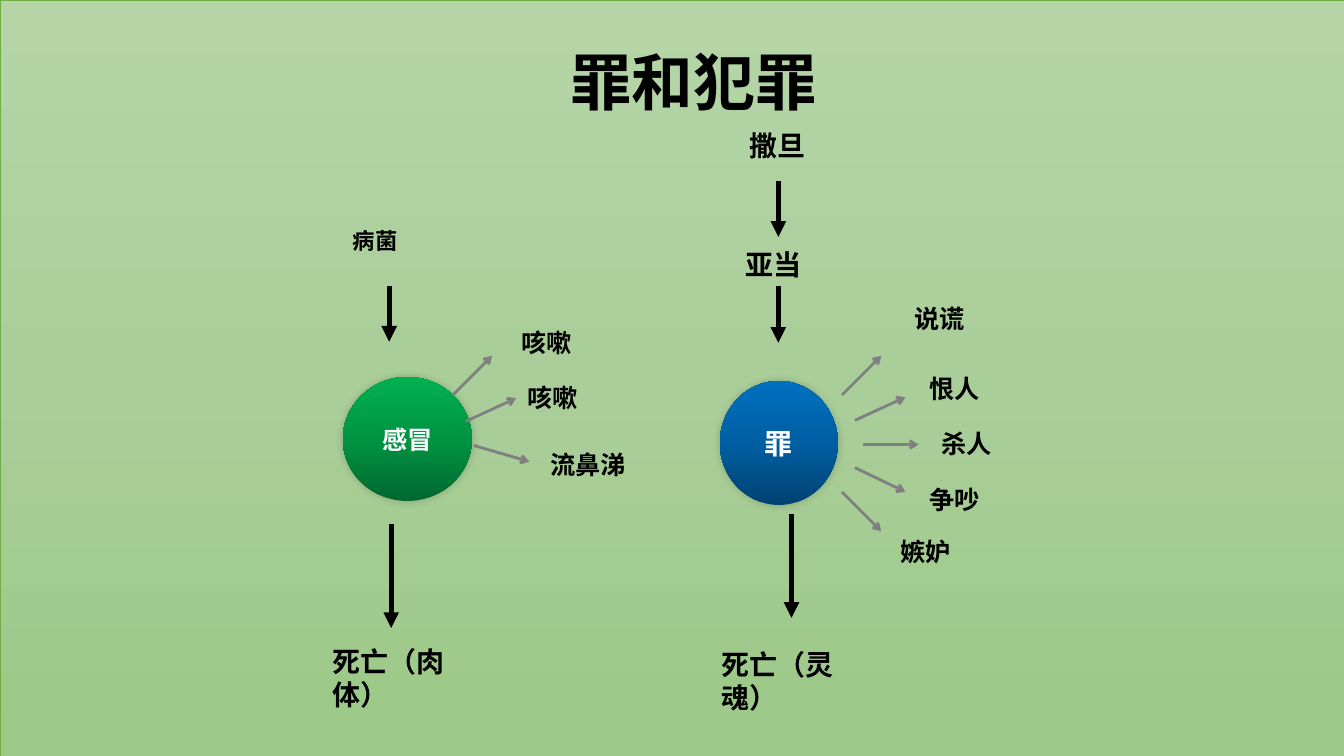
from dataclasses import dataclass

import lxml.etree
import pptx
import pptx.dml.color
import pptx.enum.shapes
import pptx.enum.text
import pptx.oxml
import pptx.oxml.ns
import pptx.util
from pptx.util import Inches

RGBColor = pptx.dml.color.RGBColor
Align = pptx.enum.text.PP_ALIGN
ShapeType = pptx.enum.shapes.MSO_SHAPE

BLACK = RGBColor(0x00, 0x00, 0x00)
WHITE = RGBColor(0xFF, 0xFF, 0xFF)
GRAY = RGBColor(0x80, 0x80, 0x80)
LEAF = RGBColor(0x70, 0xAD, 0x47)
MEADOW = (RGBColor(0xB5, 0xD5, 0xA7), RGBColor(0xAA, 0xCE, 0x9A), RGBColor(0x9C, 0xC9, 0x87))
GREENS = (RGBColor(0x00, 0x68, 0x2F), RGBColor(0x00, 0x94, 0x43), RGBColor(0x00, 0xB0, 0x50))
BLUES = (RGBColor(0x00, 0x42, 0x72), RGBColor(0x00, 0x5E, 0xA2), RGBColor(0x00, 0x70, 0xC0))

FONT = "Arial"
SLIDE_WIDTH, SLIDE_HEIGHT = 13.33, 7.5
DOWNWARD, UPWARD = 270, 90

Gradient = tuple[RGBColor, RGBColor, RGBColor]


@dataclass(frozen=True)
class Label:
    text: str
    left: float
    top: float
    width: float
    height: float = 0.4
    size: int = 18
    align: Align = Align.LEFT


@dataclass(frozen=True)
class Circle:
    text: str
    left: float
    top: float
    width: float
    height: float
    size: int
    colors: Gradient


@dataclass(frozen=True)
class Arrow:
    x1: float
    y1: float
    x2: float
    y2: float


@dataclass(frozen=True)
class ArrowStyle:
    color: RGBColor
    width: float
    head: str


CAUSE_STYLE = ArrowStyle(BLACK, 3.75, "triangle")
SYMPTOM_STYLE = ArrowStyle(GRAY, 2, "arrow")

CIRCLES = [
    Circle("感冒", 3.4, 3.74, 1.28, 1.23, 18, GREENS),
    Circle("罪", 7.14, 3.78, 1.17, 1.23, 20, BLUES),
]

CAUSE_ARROWS = [
    Arrow(3.86, 2.84, 3.86, 3.39),
    Arrow(3.88, 5.2, 3.88, 6.23),
    Arrow(7.72, 1.8, 7.72, 2.35),
    Arrow(7.72, 2.84, 7.72, 3.4),
    Arrow(7.85, 5.1, 7.85, 6.13),
]

SYMPTOM_ARROWS = [
    Arrow(4.49, 3.92, 4.88, 3.53),
    Arrow(4.62, 4.18, 5.12, 3.95),
    Arrow(4.7, 4.42, 5.25, 4.58),
    Arrow(8.35, 3.92, 8.74, 3.53),
    Arrow(8.48, 4.17, 8.98, 3.94),
    Arrow(8.56, 4.41, 9.11, 4.41),
    Arrow(8.48, 4.64, 8.98, 4.88),
    Arrow(8.35, 4.88, 8.74, 5.27),
]

LABELS = [
    Label("罪和犯罪", 4.31, 0.39, 5.14, 0.84, 44, Align.CENTER),
    Label("病菌", 3.4, 2.2, 3.58, 0.37, 16),
    Label("咳嗽", 5.07, 3.2, 2.07),
    Label("咳嗽", 5.13, 3.74, 2.2),
    Label("流鼻涕", 5.36, 4.41, 1.76),
    Label("死亡（肉体）", 3.2, 6.34, 1.8, 0.44, 20),
    Label("撒旦", 7.34, 1.23, 2.36, 0.44, 20),
    Label(" 亚当", 7.23, 2.41, 4.58, 0.44, 20),
    Label("说谎", 8.97, 2.96, 2.67),
    Label("恨人", 9.12, 3.65, 2.52),
    Label("杀人", 9.24, 4.2, 2.71),
    Label("争吵", 9.12, 4.76, 3.45),
    Label("嫉妒", 8.83, 5.27, 3.64),
    Label("死亡（灵魂）", 7.06, 6.37, 1.77, 0.44, 20),
]


def add_child(parent, tag: str, **attributes: str):
    child = lxml.etree.SubElement(parent, pptx.oxml.ns.qn(tag))
    for key, value in attributes.items():
        child.set(key, value)
    return child


def fill_gradient(shape, colors: Gradient, angle: int) -> None:
    shape.fill.gradient()
    shape.fill.gradient_angle = angle
    stops = shape.element.spPr.find(".//" + pptx.oxml.ns.qn("a:gsLst"))
    for stop in list(stops):
        stops.remove(stop)
    for position, color in zip((0, 50000, 100000), colors):
        stop = add_child(stops, "a:gs", pos=str(position))
        add_child(stop, "a:srgbClr", val=str(color))


def write_text(frame, text: str, size: int, color: RGBColor, align: Align) -> None:
    frame.text = text
    paragraph = frame.paragraphs[0]
    paragraph.alignment = align
    font = paragraph.runs[0].font
    font.name = FONT
    font.size = pptx.util.Pt(size)
    font.bold = True
    font.color.rgb = color


def add_background(slide) -> None:
    meadow = slide.shapes.add_shape(
        ShapeType.RECTANGLE, 0, 0, Inches(SLIDE_WIDTH), Inches(SLIDE_HEIGHT))
    meadow.shadow.inherit = False
    fill_gradient(meadow, MEADOW, DOWNWARD)
    meadow.line.color.rgb = LEAF
    meadow.line.width = pptx.util.Pt(0.5)


def add_circle(slide, circle: Circle) -> None:
    ball = slide.shapes.add_shape(
        ShapeType.OVAL, Inches(circle.left), Inches(circle.top),
        Inches(circle.width), Inches(circle.height))
    fill_gradient(ball, circle.colors, UPWARD)
    ball.line.fill.background()
    ball.shadow.inherit = False
    effects = ball.element.spPr.find(pptx.oxml.ns.qn("a:effectLst"))
    shadow = add_child(effects, "a:outerShdw", blurRad=str(pptx.util.Pt(6)),
                       dist="0", dir=str(315 * 60000), rotWithShape="0")
    tint = add_child(shadow, "a:srgbClr", val=str(BLACK))
    add_child(tint, "a:alpha", val="20000")
    ball.text_frame.vertical_anchor = pptx.enum.text.MSO_ANCHOR.MIDDLE
    write_text(ball.text_frame, circle.text, circle.size, WHITE, Align.CENTER)


def add_arrow(slide, arrow: Arrow, style: ArrowStyle) -> None:
    line = slide.shapes.add_connector(
        pptx.enum.shapes.MSO_CONNECTOR.STRAIGHT, Inches(arrow.x1), Inches(arrow.y1),
        Inches(arrow.x2), Inches(arrow.y2))
    line.line.color.rgb = style.color
    line.line.width = pptx.util.Pt(style.width)
    add_child(line.line._get_or_add_ln(), "a:tailEnd", type=style.head)
    add_child(line.element.spPr, "a:effectLst")


def add_label(slide, label: Label) -> None:
    box = slide.shapes.add_textbox(
        Inches(label.left), Inches(label.top), Inches(label.width), Inches(label.height))
    box.text_frame.word_wrap = True
    box.text_frame.auto_size = pptx.enum.text.MSO_AUTO_SIZE.SHAPE_TO_FIT_TEXT
    write_text(box.text_frame, label.text, label.size, BLACK, label.align)


def main() -> None:
    deck = pptx.Presentation()
    deck.slide_width = Inches(SLIDE_WIDTH)
    deck.slide_height = Inches(SLIDE_HEIGHT)
    slide = deck.slides.add_slide(deck.slide_layouts[6])
    add_background(slide)
    for circle in CIRCLES:
        add_circle(slide, circle)
    for arrow in CAUSE_ARROWS:
        add_arrow(slide, arrow, CAUSE_STYLE)
    for arrow in SYMPTOM_ARROWS:
        add_arrow(slide, arrow, SYMPTOM_STYLE)
    for label in LABELS:
        add_label(slide, label)
    deck.save("out.pptx")


if __name__ == "__main__":
    main()
